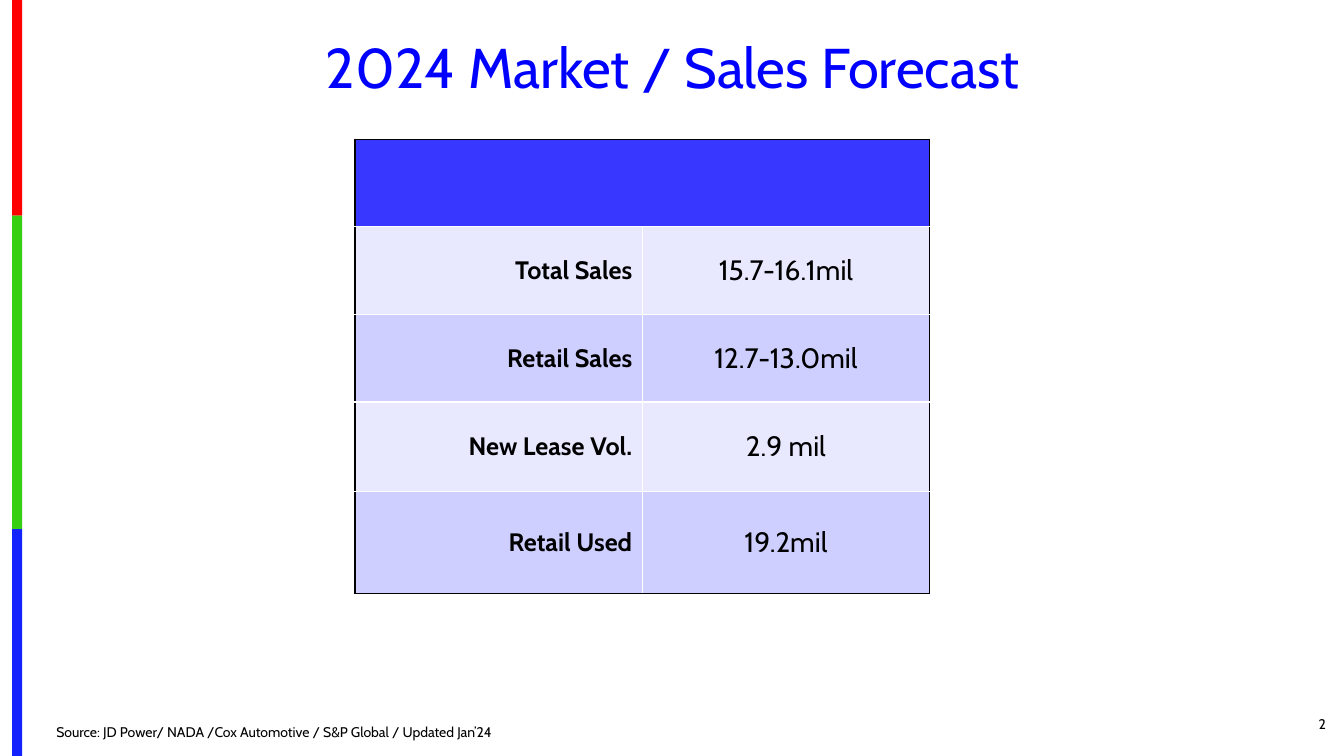
from pptx import Presentation
from pptx.dml.color import RGBColor
from pptx.enum.shapes import MSO_SHAPE
from pptx.enum.text import MSO_ANCHOR, PP_ALIGN
from pptx.oxml import parse_xml
from pptx.oxml.ns import nsdecls
from pptx.util import Inches, Pt

LEFT, MID, RIGHT = PP_ALIGN.LEFT, PP_ALIGN.CENTER, PP_ALIGN.RIGHT
TOP, CENTER = MSO_ANCHOR.TOP, MSO_ANCHOR.MIDDLE
RECT = MSO_SHAPE.RECTANGLE

TITLE = "2024 Market / Sales Forecast"
SALES = [
    ("Total Sales", "15.7-16.1mil"),
    ("Retail Sales", "12.7-13.0mil"),
    ("New Lease Vol.", "2.9 mil"),
    ("Retail Used", "19.2mil"),
]
SOURCE = "Source: JD Power/ NADA /Cox Automotive / S&P Global / Updated Jan’24"
PAGE = "2"
BARS = [("FE0000", 2.14), ("36CF12", 3.11), ("1322FE", 2.25)]
ROWS = [0.87, 0.87, 0.87, 0.89, 1.01]
COLS = [2.85, 2.85]

THEME = {
    "face": "Cabin", "ink": "000000", "title": "0000FF", "rule": "FFFFFF",
    "head": "3737FF", "bands": ("E8E8FF", "CECEFF"),
    "big": 40, "value": 20, "label": 18, "small": 10,
}


def color(name):
    return RGBColor.from_string(name)


def write(frame, text, size, align, ink=THEME["ink"], bold=False, **space):
    para = frame.paragraphs[0]
    run = para.add_run()
    run.text = text
    for key, val in {"alignment": align, **space}.items():
        setattr(para, key, val)
    for key, val in {"name": THEME["face"], "size": Pt(size), "bold": bold}.items():
        setattr(run.font, key, val)
    run.font.color.rgb = color(ink)


def edge(cell, sides):
    for side, dark in sides.items():
        ink = THEME["ink"] if dark else THEME["rule"]
        cell._tc.get_or_add_tcPr().append(parse_xml(
            f'<a:ln{side} {nsdecls("a")} w="12700"><a:solidFill>'
            f'<a:srgbClr val="{ink}"/></a:solidFill></a:ln{side}>'))


def add_bars(slide):
    top = 0
    for fill, high in BARS:
        bar = slide.shapes.add_shape(
            RECT, Inches(0.12), Inches(top), Inches(0.1), Inches(high))
        bar.shadow.inherit = False
        bar.fill.solid()
        bar.fill.fore_color.rgb = color(fill)
        bar.line.fill.background()
        top += high


def add_title(slide):
    title = slide.shapes.title
    place = {"left": 0.46, "top": 0.27, "width": 12.42, "height": 0.77}
    for key, val in place.items():
        setattr(title, key, Inches(val))
    title.text_frame.vertical_anchor = CENTER
    write(title.text_frame, TITLE, THEME["big"], MID, THEME["title"],
          space_after=Pt(6))


def add_sales(slide):
    table = slide.shapes.add_table(
        len(ROWS), len(COLS), Inches(3.52), Inches(1.38),
        Inches(sum(COLS)), Inches(sum(ROWS))).table
    for col, wide in zip(table.columns, COLS):
        col.width = Inches(wide)
    for row, high in zip(table.rows, ROWS):
        row.height = Inches(high)
    table.cell(0, 0).merge(table.cell(0, 1))
    for r in range(len(ROWS)):
        for c in range(len(COLS)):
            cell = table.cell(r, c)
            edge(cell, {"L": c == 0, "R": c == 1 or r == 0,
                        "T": r == 0, "B": r == len(ROWS) - 1})
            cell.fill.solid()
            fill = THEME["bands"][(r - 1) % 2] if r else THEME["head"]
            cell.fill.fore_color.rgb = color(fill)
            cell.vertical_anchor = CENTER
            if r:
                size, align = ((THEME["label"], RIGHT), (THEME["value"], MID))[c]
                write(cell.text_frame, SALES[r - 1][c], size, align, bold=c == 0)


def add_note(slide, text, place, align, anchor, **space):
    frame = slide.shapes.add_textbox(*map(Inches, place)).text_frame
    for key, val in {"word_wrap": True, "vertical_anchor": anchor}.items():
        setattr(frame, key, val)
    write(frame, text, THEME["small"], align, **space)


def main():
    deck = Presentation()
    deck.slide_width, deck.slide_height = Inches(13.33), Inches(7.5)
    slide = deck.slides.add_slide(deck.slide_layouts[5])
    add_bars(slide)
    add_title(slide)
    add_note(slide, PAGE, (10.25, 6.98, 3, 0.4), RIGHT, CENTER)
    add_sales(slide)
    add_note(slide, SOURCE, (0.46, 7.15, 9.45, 0.25), LEFT, TOP, line_spacing=0.9)
    deck.save("out.pptx")


if __name__ == "__main__":
    main()
